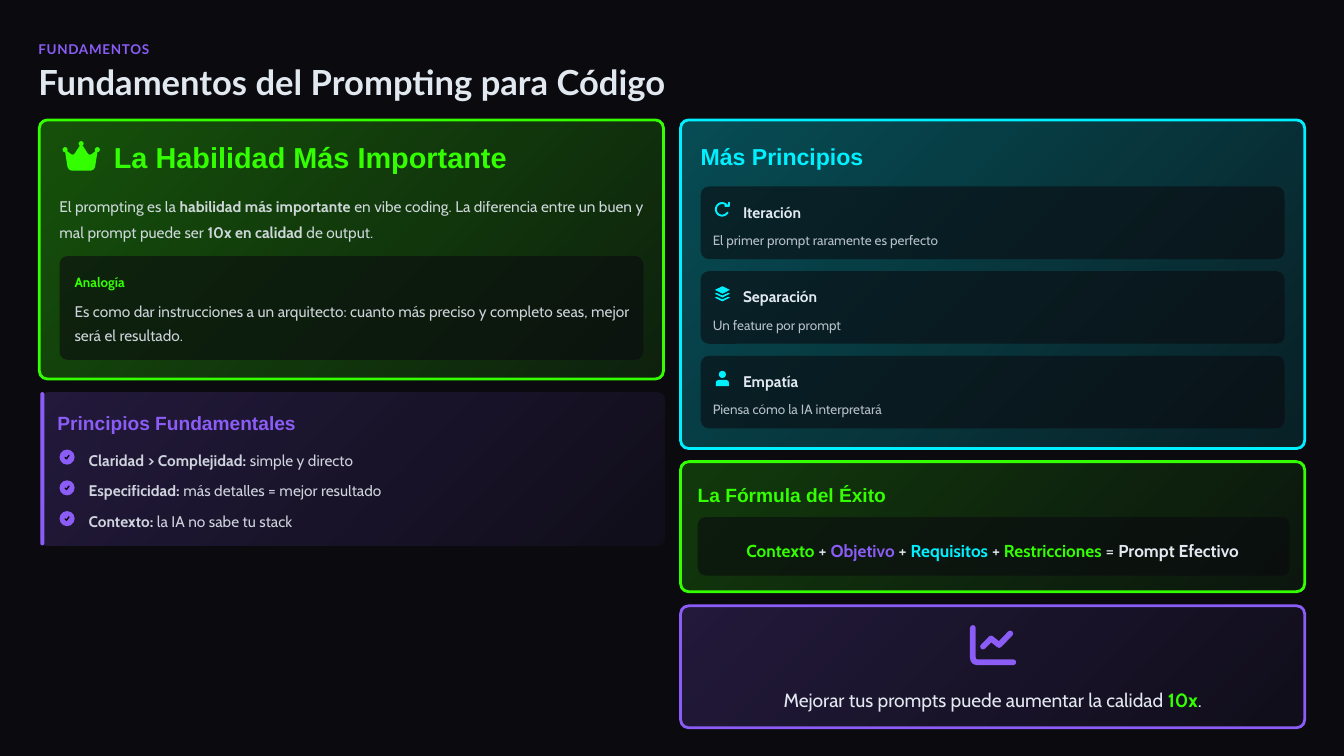
from collections import namedtuple
from math import cos, sin, radians

from lxml.etree import SubElement
from pptx import Presentation
from pptx.dml.color import RGBColor
from pptx.enum.shapes import MSO_SHAPE
from pptx.enum.text import MSO_ANCHOR, MSO_AUTO_SIZE, PP_ALIGN
from pptx.oxml.ns import qn
from pptx.util import Inches, Pt

Box = namedtuple("Box", "x y w h")


class Theme:
    dark, light = "0A0A0F", "E2E8F0"
    green, violet, cyan = "33FF00", "8B5CF6", "00F0FF"
    head, body, title = "Arial", "Cabin", "Lato"
    tiny, small, mid, large = 9.6, 11, 12.3, 13.7
    lead, hero, top = 16.5, 20.6, 24.7


# --- Shared helpers ---
def rgb(color):
    return RGBColor.from_string(color)


def fade(node, *alphas):
    """Give each colour under node its opacity in percent."""
    for color, alpha in zip(node.iter(qn("a:srgbClr")), alphas):
        SubElement(color, qn("a:alpha"), val=str(alpha * 1000))


def write(frame, parts, size, color=Theme.light, face=Theme.body, bold=False,
          line=1.2, center=False, alpha=None):
    """Parts is plain text or a list of (text, bold, color) runs."""
    frame.margin_left = frame.margin_right = 0
    frame.margin_top = frame.margin_bottom = 0
    frame.vertical_anchor = MSO_ANCHOR.MIDDLE
    frame.auto_size = MSO_AUTO_SIZE.NONE
    frame.word_wrap = True
    para = frame.paragraphs[0]
    para.alignment = PP_ALIGN.CENTER if center else PP_ALIGN.LEFT
    para.line_spacing = line
    para.font.size, para.font.name = Pt(size), face
    mixed = not isinstance(parts, str)
    if not mixed:
        para.font.bold = bold
        para.font.color.rgb = rgb(color)
        parts = [(parts, None, None)]
    for text, strong, tint in parts:
        run = para.add_run()
        run.text = text
        if mixed:
            run.font.bold = strong
            run.font.color.rgb = rgb(tint or color)
    if alpha:
        fade(para._p, *[alpha] * len(parts))
    return para


def say(slide, box, parts, size, **style):
    area = slide.shapes.add_textbox(*map(Inches, box))
    return write(area.text_frame, parts, size, **style)


def block(slide, kind, box, color):
    shape = slide.shapes.add_shape(kind, *map(Inches, box))
    shape.shadow.inherit = False
    shape.fill.solid()
    shape.fill.fore_color.rgb = rgb(color)
    shape.line.fill.background()
    return shape


def card(slide, box, color, alphas, edge=True):
    shape = block(slide, MSO_SHAPE.ROUNDED_RECTANGLE, box, color)
    shape.adjustments[0] = 0.08 / min(box.w, box.h)
    shape.fill.gradient()
    shape.fill.gradient_angle = 315
    for stop in shape.fill.gradient_stops:
        stop.color.rgb = rgb(color)
    fade(shape._element.spPr, *alphas)
    if edge:
        shape.line.color.rgb = rgb(color)
        shape.line.width = Pt(2)


def well(slide, box):
    shape = block(slide, MSO_SHAPE.ROUNDED_RECTANGLE, box, Theme.dark)
    shape.adjustments[0] = 0.08 / min(box.w, box.h)
    fade(shape._element.spPr, 60)


# --- Icons, drawn in thousandths of an inch from their top left ---
def dot(slide, x, y, size, color):
    block(slide, MSO_SHAPE.OVAL, Box(x, y, size, size), color)


def trace(slide, x, y, points, color, width=None):
    """A filled outline, or an open round-ended stroke if width is given."""
    pen = slide.shapes.build_freeform(*points[0], scale=Inches(1) / 1000)
    pen.add_line_segments(points[1:], close=width is None)
    shape = pen.convert_to_shape(Inches(x), Inches(y))
    shape.shadow.inherit = False
    if width is None:
        shape.fill.solid()
        shape.fill.fore_color.rgb = rgb(color)
        shape.line.fill.background()
    else:
        shape.fill.background()
        shape.line.color.rgb = rgb(color)
        shape.line.width = Pt(width)
        edge = shape.line._get_or_add_ln()
        edge.set("cap", "rnd")
        SubElement(edge, qn("a:round"))


def crown(slide, x, y, color):
    trace(slide, x, y, [
        (180, 58), (212, 58), (258, 130), (275, 145), (295, 142), (335, 110),
        (356, 118), (333, 268), (318, 292), (295, 302), (98, 302), (74, 292),
        (60, 268), (36, 118), (57, 110), (98, 142), (117, 145), (134, 130)], color)
    for left, top in ((0.17, 0.01), (0.01, 0.07), (0.33, 0.07)):
        dot(slide, x + left, y + top, 0.05, color)


def check(slide, x, y, color):
    dot(slide, x, y, 0.15, color)
    trace(slide, x, y, [(55, 77), (70, 92), (94, 58)], Theme.dark, 1)


def loop(slide, x, y, color):
    ring = [(72 + 62 * cos(radians(turn)), 77 + 62 * sin(radians(turn)))
            for turn in range(30, 331, 10)]
    trace(slide, x, y, ring, color, 1.4)
    trace(slide, x, y, [(142, 10), (142, 48), (103, 48)], color, 1.4)


def stack(slide, x, y, color):
    trace(slide, x, y, [(75, 0), (150, 36), (75, 74), (0, 36)], color)
    for drop in (0, 38):
        trace(slide, x, y + drop / 1000, [
            (0, 74), (18, 66), (75, 92), (132, 66), (150, 74), (75, 112)], color)


def person(slide, x, y, color):
    dot(slide, x + 0.04, y, 0.07, color)
    bust = block(slide, MSO_SHAPE.ROUND_2_SAME_RECTANGLE,
                 Box(x + 0.01, y + 0.09, 0.13, 0.06), color)
    bust.adjustments[0] = 0.5


def trend(slide, x, y, color):
    trace(slide, x, y, [(29, 60), (29, 355), (36, 382), (48, 394), (70, 400),
                        (430, 400)], color, 4.1)
    trace(slide, x, y, [(130, 245), (210, 165), (290, 230), (400, 115)], color, 4.1)


# --- Regions ---
def header(slide, box):
    tag = say(slide, Box(box.x, box.y, box.w, 0.19), "FUNDAMENTOS", Theme.tiny,
              color=Theme.violet, face=Theme.title, bold=True)
    tag._p.pPr.find(qn("a:defRPr")).set("spc", "50")
    title = slide.shapes.title
    title.left, title.top, title.width, title.height = map(
        Inches, (box.x, box.y + 0.27, box.w, 0.38))
    write(title.text_frame, "Fundamentos del Prompting para Código", Theme.top,
          face=Theme.title, bold=True, line=0.9)


def skill(slide, box):
    x, y, w, h = box
    card(slide, box, Theme.green, (30, 10))
    crown(slide, x + 0.22, y + 0.2, Theme.green)
    say(slide, Box(x + 0.74, y + 0.2, 5, 0.34), "La Habilidad Más Importante",
        Theme.hero, color=Theme.green, face=Theme.head, bold=True, line=1)
    say(slide, Box(x + 0.2, y + 0.7, 5.87, 0.5), [
        ("El prompting es la ", False, None),
        ("habilidad más importante", True, None),
        (" en vibe coding. La diferencia entre un buen y mal prompt puede ser ",
         False, None),
        ("10x en calidad", True, None),
        (" de output.", False, None)], Theme.small, line=1.4, alpha=90)
    well(slide, Box(x + 0.2, y + 1.35, w - 0.4, 1.03))
    say(slide, Box(x + 0.35, y + 1.5, 5.57, 0.19), "Analogía", Theme.tiny,
        color=Theme.green, bold=True)
    say(slide, Box(x + 0.35, y + 1.76, 5.57, 0.46),
        "Es como dar instrucciones a un arquitecto: cuanto más preciso y "
        "completo seas, mejor será el resultado.", Theme.small, line=1.3, alpha=90)


def basics(slide, box):
    x, y, w, h = box
    card(slide, box, Theme.violet, (20, 5), edge=False)
    bar = block(slide, MSO_SHAPE.ROUNDED_RECTANGLE, Box(x, y, 0.04, h), Theme.violet)
    bar.adjustments[0] = 0.5
    say(slide, Box(x + 0.17, y + 0.15, 5.97, 0.27), "Principios Fundamentales",
        Theme.large, color=Theme.violet, face=Theme.head, bold=True)
    rules = (("Claridad > Complejidad:", " simple y directo"),
             ("Especificidad:", " más detalles = mejor resultado"),
             ("Contexto:", " la IA no sabe tu stack"))
    for row, (name, text) in enumerate(rules):
        top = y + 0.53 + row * 0.305
        check(slide, x + 0.19, top + 0.04, Theme.violet)
        say(slide, Box(x + 0.48, top, 5, 0.23),
            [(name, True, None), (text, False, None)], Theme.small, line=1.3, alpha=90)


def more(slide, box):
    x, y, w, h = box
    card(slide, box, Theme.cyan, (30, 10))
    say(slide, Box(x + 0.2, y + 0.2, 5.91, 0.3), "Más Principios", Theme.lead,
        color=Theme.cyan, face=Theme.head, bold=True, line=1.1)
    ideas = ((loop, "Iteración", "El primer prompt raramente es perfecto"),
             (stack, "Separación", "Un feature por prompt"),
             (person, "Empatía", "Piensa cómo la IA interpretará"))
    for row, (icon, name, text) in enumerate(ideas):
        top = y + 0.66 + row * 0.84
        well(slide, Box(x + 0.2, top, w - 0.4, 0.72))
        icon(slide, x + 0.34, top + 0.15, Theme.cyan)
        say(slide, Box(x + 0.62, top + 0.11, 5, 0.23), name, Theme.small,
            bold=True, line=1.3)
        say(slide, Box(x + 0.32, top + 0.42, 5.63, 0.19), text, Theme.tiny, alpha=80)


def formula(slide, box):
    x, y, w, h = box
    card(slide, box, Theme.green, (20, 5))
    say(slide, Box(x + 0.17, y + 0.17, 5.97, 0.27), "La Fórmula del Éxito",
        Theme.large, color=Theme.green, face=Theme.head, bold=True)
    well(slide, Box(x + 0.17, y + 0.55, 5.87, 0.58))
    plus = (" + ", False, None)
    say(slide, Box(x + 0.27, y + 0.7, 5.65, 0.28), [
        ("Contexto", True, Theme.green), plus, ("Objetivo", True, Theme.violet), plus,
        ("Requisitos", True, Theme.cyan), plus, ("Restricciones", True, Theme.green),
        (" = ", False, None), ("Prompt Efectivo", True, None)],
        Theme.mid, line=1.4, center=True)


def result(slide, box):
    x, y, w, h = box
    card(slide, box, Theme.violet, (20, 5))
    trend(slide, x + 2.87, y + 0.16, Theme.violet)
    say(slide, Box(x + 0.9, y + 0.73, 4.39, 0.31), [
        ("Mejorar tus prompts puede aumentar la calidad ", False, None),
        ("10x", True, Theme.green), (".", False, None)],
        Theme.large, line=1.4, center=True)


def main():
    deck = Presentation()
    deck.slide_width, deck.slide_height = Inches(13.33), Inches(7.5)
    slide = deck.slides.add_slide(deck.slide_layouts[5])
    slide.background.fill.solid()
    slide.background.fill.fore_color.rgb = rgb(Theme.dark)
    left, right, wide = 0.39, 6.75, 6.19
    header(slide, Box(0.38, 0.38, 12.7, 0.65))
    skill(slide, Box(left, 1.19, wide, 2.57))
    basics(slide, Box(left + 0.01, 3.89, wide, 1.52))
    more(slide, Box(right, 1.19, wide, 3.26))
    formula(slide, Box(right, 4.58, wide, 1.29))
    result(slide, Box(right, 6.01, wide, 1.21))
    deck.save("out.pptx")


if __name__ == "__main__":
    main()
